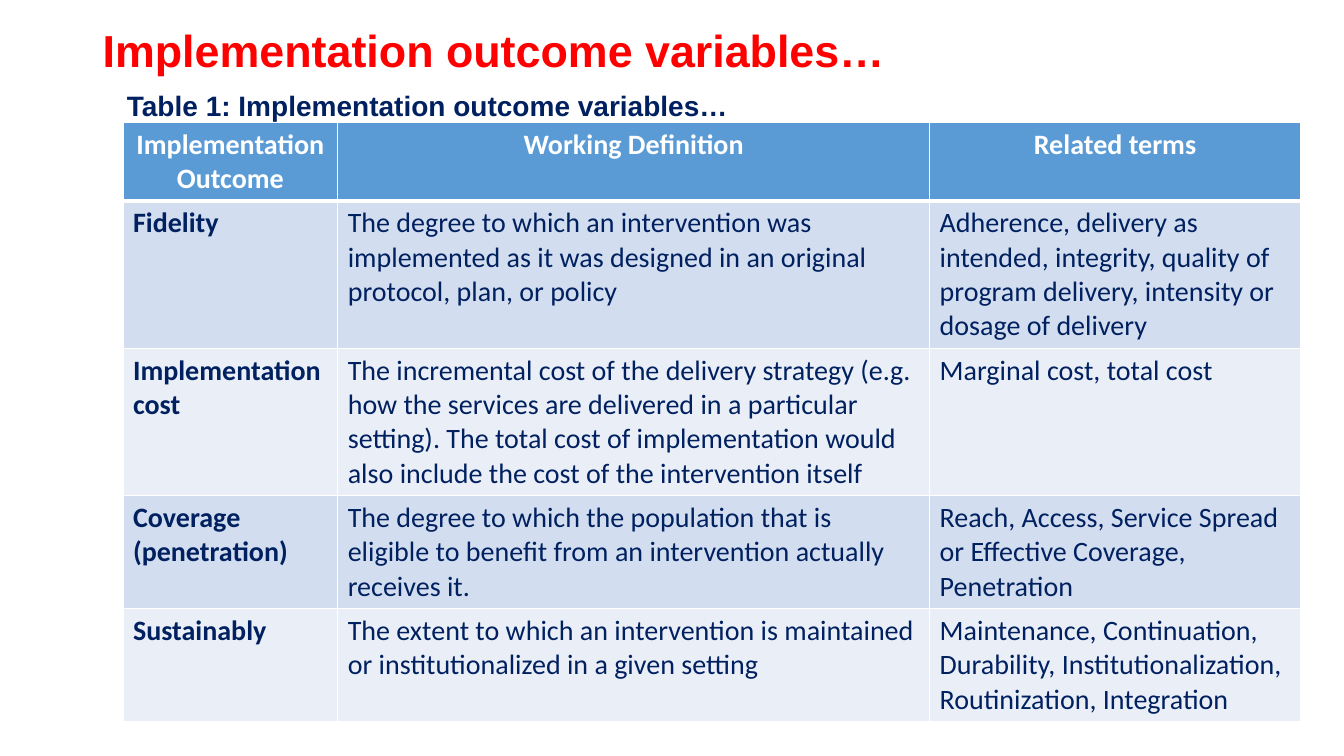
"""Build the slide on implementation outcome variables."""
from dataclasses import dataclass
from typing import Any

from lxml import etree
from pptx import Presentation
from pptx.dml.color import RGBColor
from pptx.enum.text import MSO_ANCHOR, PP_ALIGN
from pptx.oxml.ns import qn
from pptx.util import Inches, Pt

LEFT, CENTER = PP_ALIGN.LEFT, PP_ALIGN.CENTER
TOP, MIDDLE = MSO_ANCHOR.TOP, MSO_ANCHOR.MIDDLE
WIDTH, HEIGHT = Inches(13.33), Inches(7.5)
WHITE, NAVY, RED, BLUE = "FFFFFF", "002060", "FF0000", "5B9BD5"
BANDS = ("D2DEEF", "EAEFF7")
TABLE_LEFT, TABLE_TOP = 9.15, 16.2
COLUMNS = (15.98, 44.04, 27.6)
LINE_HEIGHT, CELL_PADDING = 4.52, 1.33


@dataclass
class Heading:
    text: str
    box: tuple[float, float, float, float]
    size: int
    color: str
    anchor: Any
    spacing: float


@dataclass
class Row:
    cells: tuple[str, str, str]
    lines: int


HEADINGS = (
    Heading("Implementation outcome variables…", (6.9, 3.07, 86.27, 7.87),
            32, RED, MIDDLE, 0.9),
    Heading("Table 1: Implementation outcome variables…",
            (8.7, 11.87, 82.67, 5.2), 20, NAVY, TOP, 0.8),
)
ROWS = (
    Row(("Implementation\nOutcome", "Working Definition", "Related terms"), 2),
    Row(("Fidelity",
         "The degree to which an intervention was implemented as it was "
         "designed in an original protocol, plan, or policy",
         "Adherence, delivery as intended, integrity, quality of program "
         "delivery, intensity or dosage of delivery"), 4),
    Row(("Implementation cost",
         "The incremental cost of the delivery strategy (e.g. how the services "
         "are delivered in a particular setting). The total cost of "
         "implementation would also include the cost of the intervention itself",
         "Marginal cost, total cost"), 4),
    Row(("Coverage (penetration)",
         "The degree to which the population that is eligible to benefit from "
         "an intervention actually receives it.",
         "Reach, Access, Service Spread or Effective Coverage, Penetration"), 3),
    Row(("Sustainably",
         "The extent to which an intervention is maintained or "
         "institutionalized in a given setting",
         "Maintenance, Continuation, Durability, Institutionalization, "
         "Routinization, Integration"), 3),
)


def across(percent: float) -> int:
    return round(WIDTH * percent / 100)


def down(percent: float) -> int:
    return round(HEIGHT * percent / 100)


def rgb(color: str) -> RGBColor:
    return RGBColor.from_string(color)


def format_text(tf: Any, color: str, align: Any = LEFT, **font: Any) -> None:
    for p in tf.paragraphs:
        p.alignment = align
        for r in p.runs:
            for name, value in font.items():
                setattr(r.font, name, value)
            r.font.color.rgb = rgb(color)


def add_heading(s: Any, heading: Heading) -> None:
    x, y, w, h = heading.box
    tf = s.shapes.add_textbox(across(x), down(y), across(w), down(h)).text_frame
    tf.word_wrap = True
    tf.vertical_anchor = heading.anchor
    tf.text = heading.text
    tf.paragraphs[0].line_spacing = heading.spacing
    format_text(tf, heading.color, name="Arial", size=Pt(heading.size), bold=True)


def add_borders(cell: Any, widths: dict[str, int]) -> None:
    tc_pr = cell._tc.get_or_add_tcPr()
    for side, width in widths.items():
        ln = etree.SubElement(tc_pr, qn(f"a:ln{side}"), w=str(Pt(width)))
        fill = etree.SubElement(ln, qn("a:solidFill"))
        etree.SubElement(fill, qn("a:srgbClr"), val=WHITE)


def add_outcome_table(s: Any, rows: tuple[Row, ...]) -> None:
    heights = [CELL_PADDING + LINE_HEIGHT * row.lines for row in rows]
    table = s.shapes.add_table(
        len(rows), len(COLUMNS), across(TABLE_LEFT), down(TABLE_TOP),
        across(sum(COLUMNS)), down(sum(heights))).table
    for column, width in zip(table.columns, COLUMNS):
        column.width = across(width)
    for i, row in enumerate(rows):
        header = i == 0
        table.rows[i].height = down(heights[i])
        for j, text in enumerate(row.cells):
            cell = table.cell(i, j)
            cell.text = text
            add_borders(cell, {"L": 1, "R": 1, "T": 3 if i == 1 else 1,
                               "B": 3 if header else 1})
            cell.fill.solid()
            cell.fill.fore_color.rgb = rgb(BLUE if header else BANDS[(i - 1) % 2])
            format_text(cell.text_frame, WHITE if header else NAVY,
                        CENTER if header else LEFT, name="Calibri",
                        size=Pt(20), bold=header or j == 0)


def main() -> None:
    prs = Presentation()
    prs.slide_width, prs.slide_height = WIDTH, HEIGHT
    s = prs.slides.add_slide(prs.slide_layouts[6])
    add_outcome_table(s, ROWS)
    for heading in HEADINGS:
        add_heading(s, heading)
    prs.save("out.pptx")


if __name__ == "__main__":
    main()
